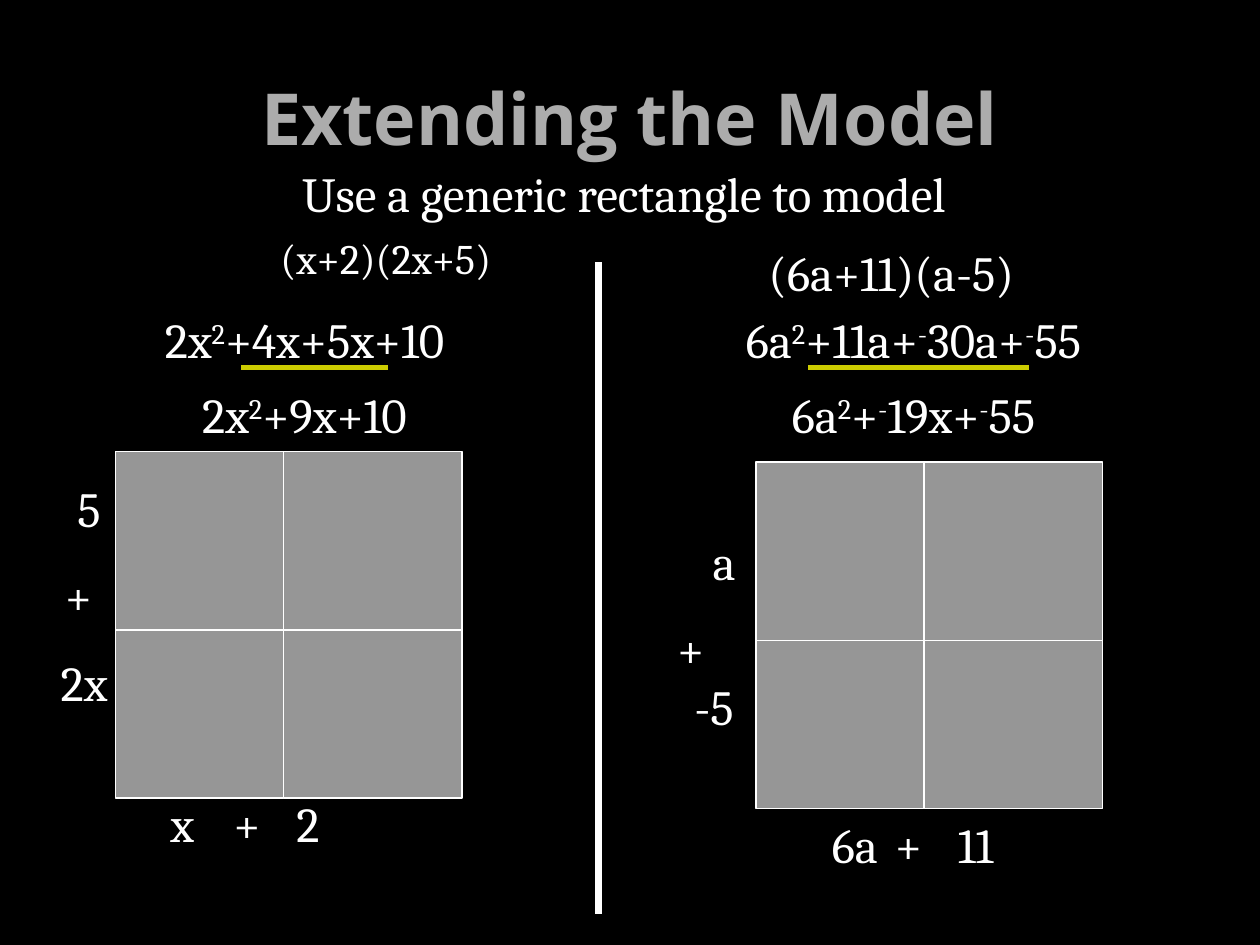
import pptx
import pptx.util
import pptx.dml.color
import pptx.enum.shapes
import pptx.enum.text
import lxml.etree

# Places are in grid units: the slide is 120 columns by 90 rows.
COLS, ROWS = 120, 90
WHITE, GREY, YELLOW, BLACK = "FFFFFF", "969696", "CCCC00", "000000"
BODY_FONT, TITLE_FONT = "Cambria", "Open Sans"
TITLE = "Extending the Model"

# Paragraph: text with superscripts between bars, then its options.
# left, right: margins in inches; before: points; tabs: inches.
INTRO = [
    ("Use a generic rectangle to model", dict(left=0.57)),
    ("(x+2)(2x+5)", dict(left=1.96, size=24, before=5.5, align="LEFT")),
]
FACTORS = [("(6a+11)(a-5)", dict(align="LEFT"))]

MODELS = [
    dict(
        expansion=["2x|2|+4x+5x+10", "2x|2|+9x+10"],
        expansion_at=(8, 30, 42, 13),
        underline=(23, 37, 35),
        corner=(11, 43),
        side=[("5", dict(left=0.08)), ("+", dict(right=0.09)), ("2x", {})],
        side_at=(3, 45, 10, 24),
        bottom=[("x\t+\t2", dict(align="LEFT", left=0.17, tabs=(0.72, 1.18)))],
        bottom_at=(13, 75, 28, 7),
    ),
    dict(
        expansion=["6a|2|+11a+|-|30a+|-|55", "6a|2|+|-|19x+|-|55"],
        expansion_at=(63, 30, 48, 13),
        underline=(77, 98, 35),
        corner=(72, 44),
        side=[("a", dict(left=0.16)), ("+", dict(right=0.37)),
              ("-5", dict(before=0))],
        side_at=(63, 50, 10, 21),
        bottom=[("6a\t+\t11", dict(align="LEFT", left=0.17, tabs=(0.63, 1.01)))],
        bottom_at=(76, 77, 28, 7),
    ),
]
CELL_WIDTHS, CELL_HEIGHTS = (16, 17), (17, 16)

prs = pptx.Presentation()
prs.slide_width, prs.slide_height = pptx.util.Inches(10), pptx.util.Inches(7.5)
s = prs.slides.add_slide(prs.slide_layouts[5])


def color(value):
    return pptx.dml.color.RGBColor.from_string(value)


def place(*units):
    """Turn alternating column and row counts into slide lengths."""
    sizes = (prs.slide_width / COLS, prs.slide_height / ROWS)
    return [round(u * sizes[i % 2]) for i, u in enumerate(units)]


def add_run(p, text, size, font=BODY_FONT, fill=WHITE, bold=False):
    r = p.add_run()
    r.text = text
    r.font.name, r.font.size, r.font.bold = font, pptx.util.Pt(size), bold
    r.font.color.rgb = color(fill)
    return r


def set_margins(p, left, right, tabs):
    pPr = p._p.get_or_add_pPr()
    pPr.set("marL", str(pptx.util.Inches(left)))
    pPr.set("marR", str(pptx.util.Inches(right)))
    pPr.set("indent", "0")
    if tabs:
        ns = "{http://schemas.openxmlformats.org/drawingml/2006/main}"
        tab_list = lxml.etree.SubElement(pPr, ns + "tabLst")
        for tab in tabs:
            lxml.etree.SubElement(tab_list, ns + "tab",
                                  pos=str(pptx.util.Inches(tab)), algn="l")


def add_paragraph(p, text, first, align="CENTER", size=28, before=16,
                  spacing=None, left=0, right=0, tabs=()):
    p.alignment = pptx.enum.text.PP_ALIGN[align]
    p.space_before = pptx.util.Pt(0 if first else before)
    if spacing:
        p.line_spacing = spacing
    set_margins(p, left, right, tabs)
    for i, part in enumerate(text.split("|")):
        r = add_run(p, part, size)
        if i % 2:
            r._r.get_or_add_rPr().set("baseline", "30000")


def add_text(at, paragraphs):
    tf = s.shapes.add_textbox(*place(*at)).text_frame
    tf.word_wrap = True
    for i, (text, options) in enumerate(paragraphs):
        p = tf.add_paragraph() if i else tf.paragraphs[0]
        add_paragraph(p, text, i == 0, **options)


def add_line(start, end, stroke, width):
    line = s.shapes.add_connector(pptx.enum.shapes.MSO_CONNECTOR.STRAIGHT,
                                  *place(*start, *end))
    line.line.color.rgb = color(stroke)
    line.line.width = pptx.util.Pt(width)
    lxml.etree.SubElement(
        line._element.spPr,
        "{http://schemas.openxmlformats.org/drawingml/2006/main}effectLst")


def add_rectangle_model(corner):
    y = corner[1]
    for height in CELL_HEIGHTS:
        x = corner[0]
        for width in CELL_WIDTHS:
            sp = s.shapes.add_shape(pptx.enum.shapes.MSO_SHAPE.RECTANGLE,
                                    *place(x, y, width, height))
            sp.shadow.inherit = False
            sp.fill.solid()
            sp.fill.fore_color.rgb = color(GREY)
            sp.line.color.rgb = color(WHITE)
            sp.line.width = pptx.util.Pt(0.75)
            x += width
        y += height


s.background.fill.solid()
s.background.fill.fore_color.rgb = color(BLACK)

title = s.shapes.title
title.left, title.top, title.width, title.height = place(6, 3.6, 108, 15)
title.text_frame.vertical_anchor = pptx.enum.text.MSO_ANCHOR.MIDDLE
p = title.text_frame.paragraphs[0]
p.alignment = pptx.enum.text.PP_ALIGN.CENTER
add_run(p, TITLE, 41, TITLE_FONT, "ACACAC", True)

add_text((2, 15, 108, 59.4), INTRO)
add_line((57, 25), (57, 87), WHITE, 4.5)
for model in MODELS:
    add_text(model["expansion_at"],
             [(text, dict(spacing=0.8)) for text in model["expansion"]])
    add_rectangle_model(model["corner"])
    add_text(model["side_at"], model["side"])
    add_text(model["bottom_at"], model["bottom"])
    x1, x2, y = model["underline"]
    add_line((x1, y), (x2, y), YELLOW, 3)
add_text((72, 22.5, 32, 7), FACTORS)

prs.save("out.pptx")
